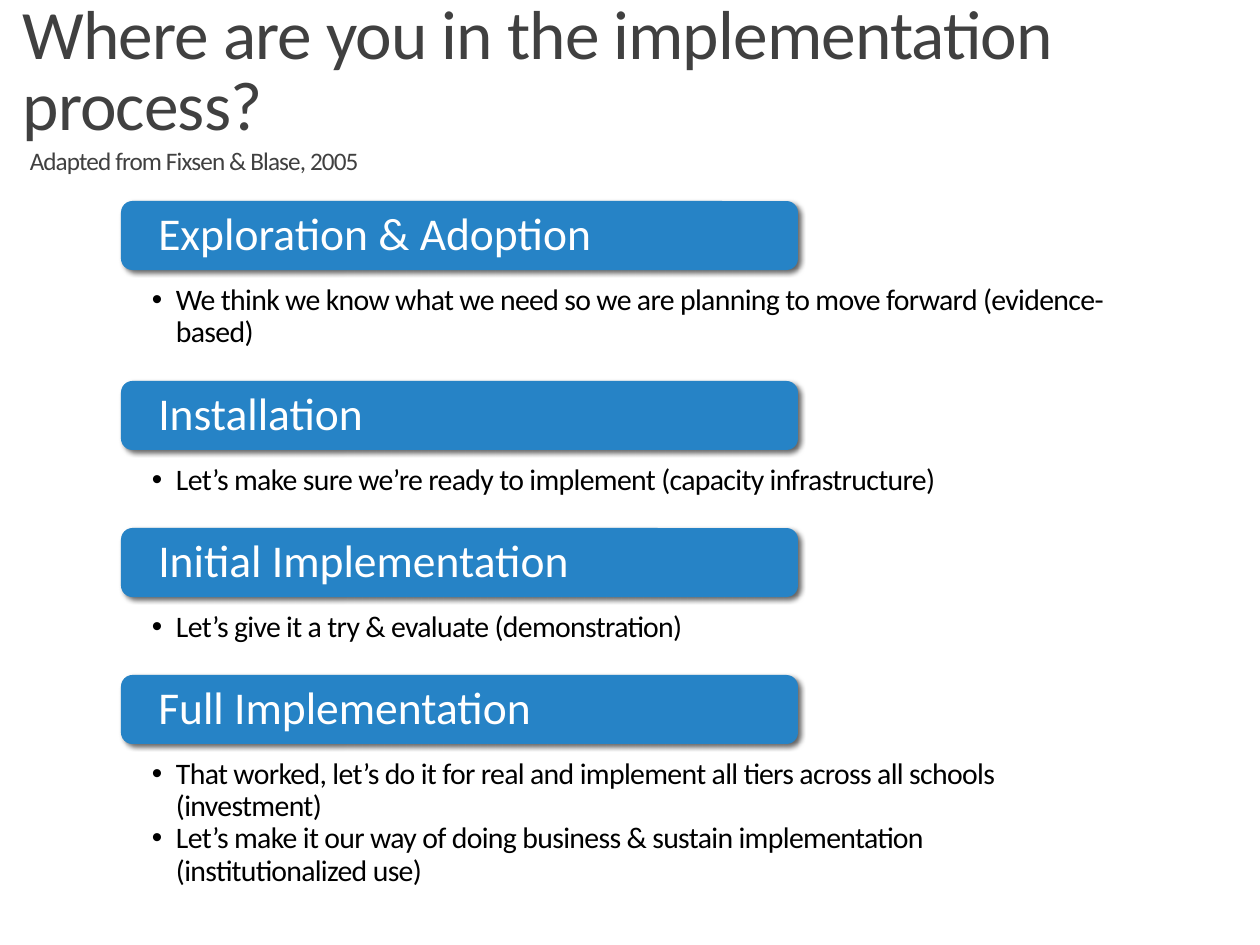
from copy import deepcopy
from dataclasses import dataclass

from lxml.etree import SubElement
from pptx import Presentation
from pptx.dml.color import RGBColor
from pptx.enum.shapes import MSO_SHAPE
from pptx.enum.text import MSO_ANCHOR, MSO_AUTO_SIZE, PP_ALIGN
from pptx.oxml.ns import qn
from pptx.util import Emu, Pt

PX = 914400 // 126
FONT = "Calibri"
COLORS = {"blue": "2683C6", "white": "FFFFFF", "black": "000000", "gray": "404040"}
FIRST_TOP = 236
GAP = 47
HEADER_RISE = 35


@dataclass
class Stage:
    name: str
    points: list[str]
    height: int


STAGES = [
    Stage(
        "Exploration & Adoption",
        ["We think we know what we need so we are planning to move forward (evidence-based)"],
        133,
    ),
    Stage(
        "Installation",
        ["Let’s make sure we’re ready to implement (capacity infrastructure)"],
        100,
    ),
    Stage("Initial Implementation", ["Let’s give it a try & evaluate (demonstration)"], 100),
    Stage(
        "Full Implementation",
        [
            "That worked, let’s do it for real and implement all tiers across all schools (investment)",
            "Let’s make it our way of doing business & sustain implementation (institutionalized use)",
        ],
        199,
    ),
]


def px(n: int) -> Emu:
    return Emu(n * PX)


def add_text(p, text: str, *, size: float, color: str, spacing: float = 0, line: float = 0.9):
    p.alignment = PP_ALIGN.LEFT
    p.line_spacing = line
    r = p.add_run()
    r.text = text
    r.font.name = FONT
    r.font.size = Pt(size)
    r.font.color.rgb = RGBColor.from_string(COLORS[color])
    if spacing:
        r._r.get_or_add_rPr().set("spc", str(round(spacing * 100)))
    return r


def add_bullet(p) -> None:
    pPr = p._p.get_or_add_pPr()
    pPr.set("marL", str(px(24)))
    pPr.set("indent", str(-px(24)))
    SubElement(pPr, qn("a:buFont"), typeface="Arial")
    SubElement(pPr, qn("a:buChar"), char="•")


def add_shadow(sp) -> None:
    effects = sp._element.spPr.find(qn("a:effectLst"))
    shadow = SubElement(
        effects, qn("a:outerShdw"),
        blurRad=str(Pt(3)), dist=str(Pt(2)), dir="2700000", algn="ctr", rotWithShape="0",
    )
    color = SubElement(shadow, qn("a:srgbClr"), val=COLORS["black"])
    SubElement(color, qn("a:alpha"), val="60000")


def add_box(slide, kind, box: tuple[int, ...], fill: str, margins: tuple[int, ...], anchor):
    sp = slide.shapes.add_shape(kind, *map(px, box))
    sp.shadow.inherit = False
    sp.fill.solid()
    sp.fill.fore_color.rgb = RGBColor.from_string(COLORS[fill])
    sp.line.fill.background()
    tf = sp.text_frame
    tf.word_wrap = True
    tf.vertical_anchor = anchor
    tf.margin_left, tf.margin_top, tf.margin_right, tf.margin_bottom = map(px, margins)
    return sp


def add_stage(slide, stage: Stage, top: int) -> None:
    panel = add_box(
        slide, MSO_SHAPE.RECTANGLE, (64, top, 1137, stage.height),
        "white", (88, 49, 88, 16), MSO_ANCHOR.TOP,
    )
    fill = panel._element.spPr.find(qn("a:solidFill"))
    SubElement(fill[0], qn("a:alpha"), val="90000")
    tf = panel.text_frame
    for i, point in enumerate(stage.points):
        p = tf.add_paragraph() if i else tf.paragraphs[0]
        add_text(p, point, size=17, color="black", spacing=-0.4)
        add_bullet(p)

    header = add_box(
        slide, MSO_SHAPE.ROUNDED_RECTANGLE, (121, top - HEADER_RISE, 677, 69),
        "blue", (34, 0, 34, 0), MSO_ANCHOR.MIDDLE,
    )
    add_shadow(header)
    add_text(header.text_frame.paragraphs[0], stage.name, size=26, color="white")


def add_title(slide) -> None:
    title = slide.shapes.title
    title.left, title.top, title.width, title.height = map(px, (10, 22, 1250, 161))
    tf = title.text_frame
    tf.word_wrap = True
    tf.auto_size = MSO_AUTO_SIZE.NONE
    tf.vertical_anchor = MSO_ANCHOR.BOTTOM
    p = tf.paragraphs[0]
    style = {"color": "gray", "spacing": -0.5, "line": 0.85}
    r = add_text(p, "Where are you in the implementation process?", size=39.6, **style)
    p.add_line_break()
    p._p.find(qn("a:br")).append(deepcopy(r._r.rPr))
    add_text(p, " ", size=18, **style)
    add_text(p, "Adapted from Fixsen & Blase, 2005", size=14.4, **style)


def main() -> None:
    prs = Presentation()
    prs.slide_width, prs.slide_height = px(1260), px(945)
    slide = prs.slides.add_slide(prs.slide_layouts[5])
    add_title(slide)
    top = FIRST_TOP
    for stage in STAGES:
        add_stage(slide, stage, top)
        top += stage.height + GAP
    prs.save("out.pptx")


if __name__ == "__main__":
    main()
